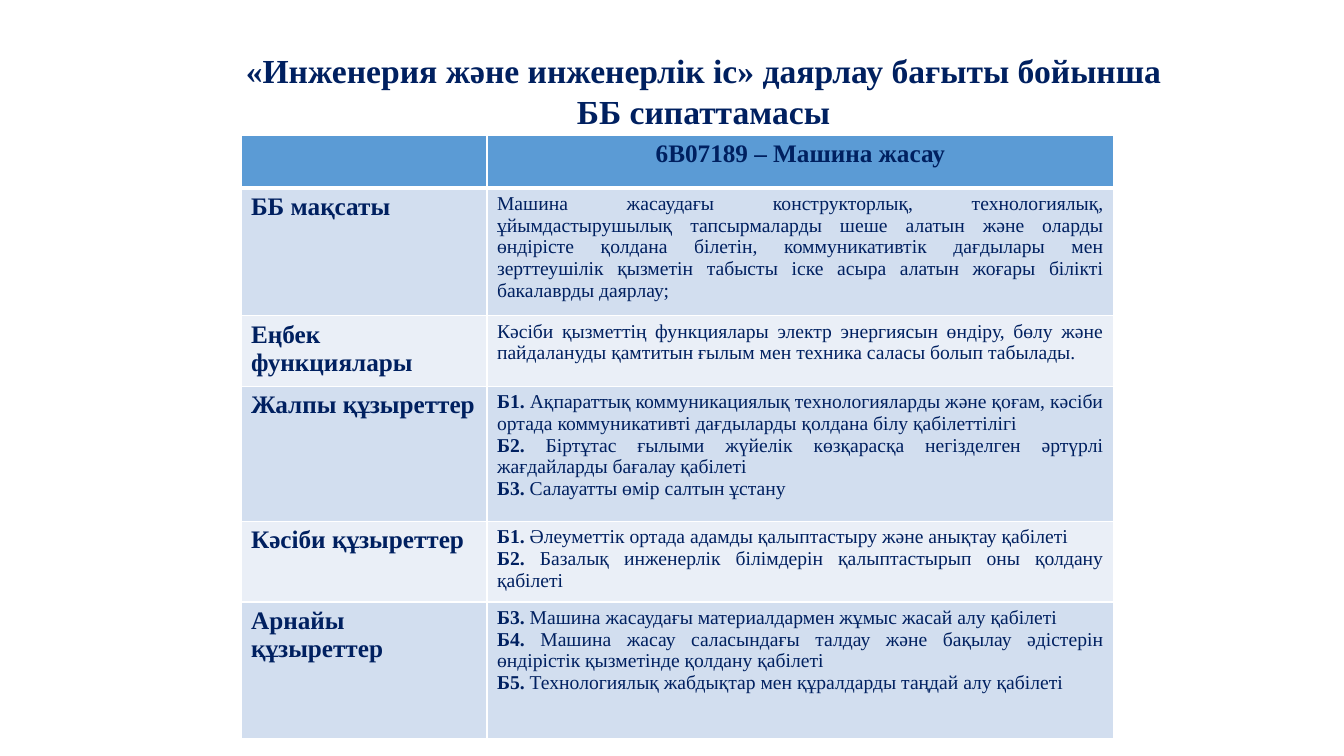
"""Builds a slide describing an educational programme in a two-column table."""
from lxml.etree import SubElement
from pptx import Presentation
from pptx.dml.color import RGBColor
from pptx.enum.text import MSO_ANCHOR as Anchor, PP_ALIGN as Align
from pptx.oxml.ns import qn
from pptx.util import Pt

TITLE = ["«Инженерия және инженерлік іс» даярлау бағыты бойынша", "ББ сипаттамасы"]
PROGRAMME = "6В07189 – Машина жасау"
SECTIONS = [
    ("ББ мақсаты", [
        ("", "Машина жасаудағы конструкторлық, технологиялық, ұйымдастырушылық "
             "тапсырмаларды шеше алатын және оларды өндірісте қолдана білетін, "
             "коммуникативтік дағдылары мен зерттеушілік қызметін табысты іске асыра "
             "алатын жоғары білікті бакалаврды даярлау;")]),
    ("Еңбек функциялары", [
        ("", "Кәсіби қызметтің функциялары электр энергиясын өндіру, бөлу және "
             "пайдалануды қамтитын ғылым мен техника саласы болып табылады.")]),
    ("Жалпы құзыреттер", [
        ("Б1. ", "Ақпараттық коммуникациялық технологияларды және қоғам, кәсіби "
                 "ортада коммуникативті дағдыларды қолдана білу қабілеттілігі"),
        ("Б2. ", "Біртұтас ғылыми жүйелік көзқарасқа негізделген әртүрлі "
                 "жағдайларды бағалау қабілеті"),
        ("Б3. ", "Салауатты өмір салтын ұстану")]),
    ("Кәсіби құзыреттер", [
        ("Б1. ", "Әлеуметтік ортада адамды қалыптастыру және анықтау қабілеті"),
        ("Б2. ", "Базалық инженерлік білімдерін қалыптастырып оны қолдану қабілеті")]),
    ("Арнайы құзыреттер", [
        ("Б3. ", "Машина жасаудағы материалдармен жұмыс жасай алу қабілеті"),
        ("Б4. ", "Машина жасау саласындағы талдау және бақылау әдістерін "
                 "өндірістік қызметінде қолдану қабілеті"),
        ("Б5. ", "Технологиялық жабдықтар мен құралдарды таңдай алу қабілеті")]),
]

SLIDE_SIZE = (1344, 756)
TITLE_BOX = (124, 38, 1159, 105)
TABLE_CORNER = (241, 135)
COLUMN_WIDTHS = (246, 627)
ROW_HEIGHTS = (53, 123, 68, 135, 77, 137)

FONT = "Times New Roman"
TITLE_PT, HEADING_PT, BODY_PT = 24, 18, 14
NAVY = RGBColor(0x00, 0x20, 0x60)
WHITE = RGBColor(0xFF, 0xFF, 0xFF)
HEADER_BLUE = RGBColor(0x5B, 0x9B, 0xD5)
BANDS = (RGBColor(0xD2, 0xDE, 0xEF), RGBColor(0xEA, 0xEF, 0xF7))


def px(length):
    return round(length * 914400 / 100.8)


def add_run(paragraph, text, size, bold):
    run = paragraph.add_run()
    run.text = text
    run.font.name = FONT
    run.font.size = Pt(size)
    run.font.bold = bold
    run.font.color.rgb = NAVY


def style_cell(cell, color, bottom_pt=1):
    properties = cell._tc.get_or_add_tcPr()
    for side, width in (("L", 1), ("R", 1), ("T", 1), ("B", bottom_pt)):
        border = SubElement(properties, qn(f"a:ln{side}"), w=str(Pt(width)))
        border_fill = SubElement(border, qn("a:solidFill"))
        SubElement(border_fill, qn("a:srgbClr"), val=str(WHITE))
    cell.fill.solid()
    cell.fill.fore_color.rgb = color


def add_title(slide):
    frame = slide.shapes.add_textbox(*map(px, TITLE_BOX)).text_frame
    frame.word_wrap = True
    frame.vertical_anchor = Anchor.MIDDLE
    heading = frame.paragraphs[0]
    heading.alignment = Align.CENTER
    for index, line in enumerate(TITLE):
        if index:
            heading.add_line_break()
        add_run(heading, line, TITLE_PT, True)


def add_programme_table(slide):
    size = (sum(COLUMN_WIDTHS), sum(ROW_HEIGHTS))
    table = slide.shapes.add_table(
        len(ROW_HEIGHTS), len(COLUMN_WIDTHS), *map(px, TABLE_CORNER + size)).table
    for column, width in zip(table.columns, COLUMN_WIDTHS):
        column.width = px(width)
    for row, height in zip(table.rows, ROW_HEIGHTS):
        row.height = px(height)

    for cell in table.rows[0].cells:
        style_cell(cell, HEADER_BLUE, bottom_pt=3)
    programme = table.cell(0, 1).text_frame.paragraphs[0]
    programme.alignment = Align.CENTER
    add_run(programme, PROGRAMME, HEADING_PT, True)

    for index, (label, items) in enumerate(SECTIONS):
        label_cell, items_cell = table.rows[index + 1].cells
        for cell in (label_cell, items_cell):
            style_cell(cell, BANDS[index % 2])
        add_run(label_cell.text_frame.paragraphs[0], label, HEADING_PT, True)
        frame = items_cell.text_frame
        for position, (code, text) in enumerate(items):
            item = frame.add_paragraph() if position else frame.paragraphs[0]
            item.alignment = Align.JUSTIFY
            if code:
                add_run(item, code, BODY_PT, True)
            add_run(item, text, BODY_PT, False)


def main():
    deck = Presentation()
    deck.slide_width, deck.slide_height = map(px, SLIDE_SIZE)
    slide = deck.slides.add_slide(deck.slide_layouts[6])
    add_title(slide)
    add_programme_table(slide)
    deck.save("out.pptx")


if __name__ == "__main__":
    main()
